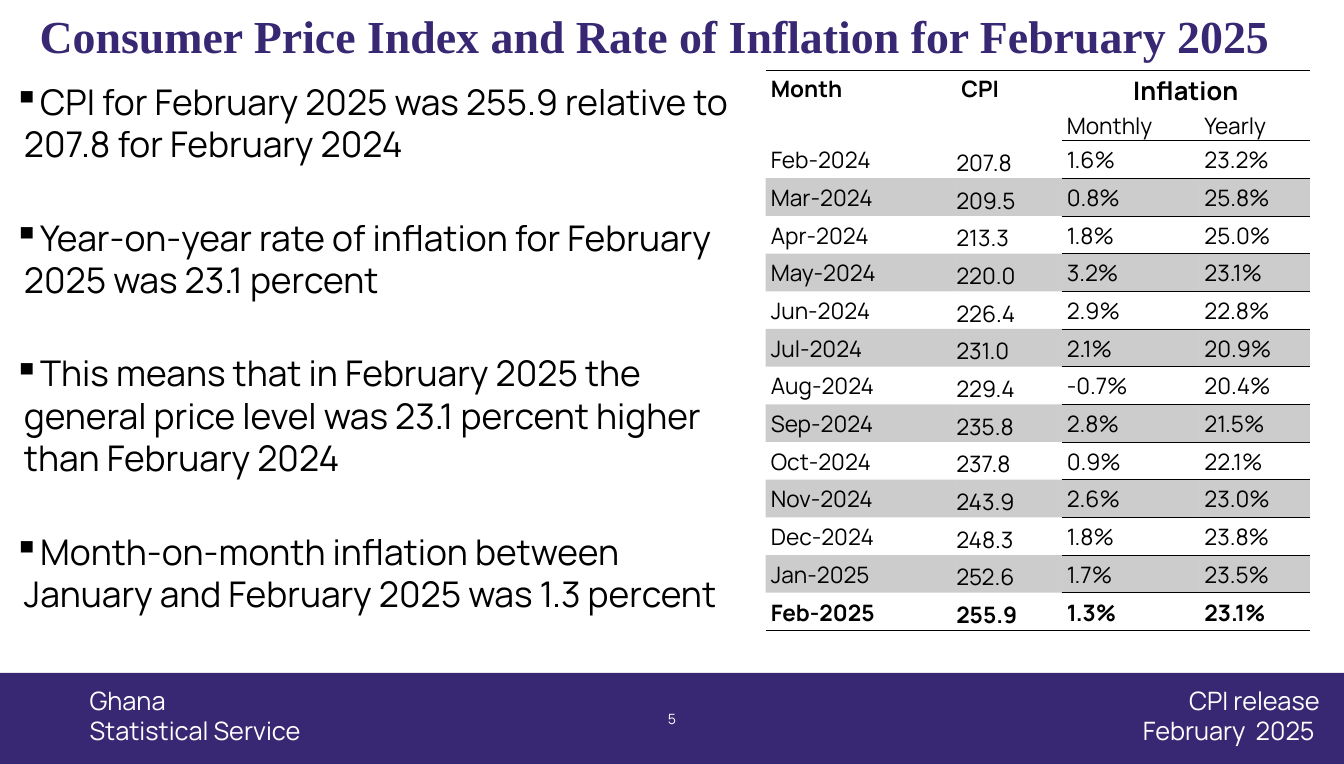
from dataclasses import dataclass

import lxml.etree
import pptx
import pptx.dml.color
import pptx.enum.shapes
import pptx.enum.text
import pptx.oxml.ns
import pptx.util

Inches = pptx.util.Inches
Align = pptx.enum.text.PP_ALIGN
Anchor = pptx.enum.text.MSO_ANCHOR
qn = pptx.oxml.ns.qn


@dataclass(frozen=True)
class Theme:
    """Colours, fonts and type sizes of the slide."""
    purple: str = "382873"
    black: str = "000000"
    white: str = "FFFFFF"
    body_font: str = "Manrope"
    title_font: str = "Times New Roman"
    title: float = 64.8
    bullet: float = 50
    group: float = 36
    footer: float = 35.8
    table: float = 32
    number: float = 20


THEME = Theme()
TITLE = "Consumer Price Index and Rate of Inflation for February 2025 "
BULLETS = [
    "CPI for February 2025 was 255.9 relative to 207.8 for February 2024",
    "Year-on-year rate of inflation for February 2025 was 23.1 percent",
    "This means that in February 2025 the general price level was 23.1 percent higher than February 2024",
    "Month-on-month inflation between  January and February 2025 was 1.3 percent",
]
COLUMN_WIDTHS = [3.74, 2.07, 2.7, 2.17]
HEADER_HEIGHTS = [0.74, 0.64]
ROW_HEIGHT = 0.74
ROWS = [
    ("Month", "CPI", "Inflation", ""),
    ("", "", "Monthly", "Yearly"),
    ("Feb-2024", "207.8", "1.6%", "23.2%"),
    ("Mar-2024", "209.5", "0.8%", "25.8%"),
    ("Apr-2024", "213.3", "1.8%", "25.0%"),
    ("May-2024", "220.0", "3.2%", "23.1%"),
    ("Jun-2024", "226.4", "2.9%", "22.8%"),
    ("Jul-2024", "231.0", "2.1%", "20.9%"),
    ("Aug-2024", "229.4", "-0.7%", "20.4%"),
    ("Sep-2024", "235.8", "2.8%", "21.5%"),
    ("Oct-2024", "237.8", "0.9%", "22.1%"),
    ("Nov-2024", "243.9", "2.6%", "23.0%"),
    ("Dec-2024", "248.3", "1.8%", "23.8%"),
    ("Jan-2025", "252.6", "1.7%", "23.5%"),
    ("Feb-2025", "255.9", "1.3%", "23.1%"),
]


def rgb(colour):
    """Turn a hex string into a colour value."""
    return pptx.dml.color.RGBColor.from_string(colour)


def style_text(text_frame, size, colour, font=THEME.body_font, bold=False, align=None):
    """Format every run and paragraph of a text frame."""
    for paragraph in text_frame.paragraphs:
        paragraph.alignment = align
        for run in paragraph.runs:
            run.font.size = pptx.util.Pt(size)
            run.font.name = font
            run.font.bold = bold
            run.font.color.rgb = rgb(colour)


def add_text(slide, box, text, size, colour, **style):
    """Place a wrapping text box and return its text frame."""
    text_frame = slide.shapes.add_textbox(*map(Inches, box)).text_frame
    text_frame.word_wrap = True
    text_frame.text = text
    style_text(text_frame, size, colour, **style)
    return text_frame


def add_title(slide, box):
    """Place the centred slide title."""
    text_frame = add_text(slide, box, TITLE, THEME.title, THEME.purple,
                          font=THEME.title_font, bold=True, align=Align.CENTER)
    text_frame.vertical_anchor = Anchor.MIDDLE
    text_frame.paragraphs[0].line_spacing = 0.9


def add_bullets(slide, box):
    """Place the key findings as a bulleted list."""
    text_frame = add_text(slide, box, "\n".join(BULLETS), THEME.bullet, THEME.black)
    for paragraph in text_frame.paragraphs:
        paragraph.space_after = pptx.util.Pt(72)
        properties = paragraph._p.get_or_add_pPr()
        properties.set("marL", str(Inches(0.2)))
        properties.set("indent", str(Inches(-0.2)))
        lxml.etree.SubElement(properties, qn("a:buChar"), char="▪")


def set_borders(cell, sides):
    """Draw the named sides of a cell and clear the others."""
    properties = cell._tc.get_or_add_tcPr()
    for side in "LRTB":
        line = lxml.etree.SubElement(properties, qn(f"a:ln{side}"), w=str(pptx.util.Pt(1)))
        if side in sides:
            fill = lxml.etree.SubElement(line, qn("a:solidFill"))
            lxml.etree.SubElement(fill, qn("a:srgbClr"), val=THEME.black)
        else:
            lxml.etree.SubElement(line, qn("a:noFill"))


def border_sides(row, column):
    """Tell which sides of a table cell carry a rule."""
    if row == 0:
        return "TB" if column < 2 else "T"
    if row == 1:
        return "B"
    if column >= 2:
        return "TB"
    return "B" if row == len(ROWS) - 1 else ""


def fill_cell(cell, shaded):
    """Shade a cell with translucent black or leave it clear."""
    if not shaded:
        cell.fill.background()
        return
    cell.fill.solid()
    cell.fill.fore_color.rgb = rgb(THEME.black)
    colour = cell._tc.tcPr.find(qn("a:solidFill")).find(qn("a:srgbClr"))
    lxml.etree.SubElement(colour, qn("a:alpha"), val="20000")


def add_cpi_table(slide, box):
    """Place the table of monthly index values and inflation rates."""
    table = slide.shapes.add_table(len(ROWS), len(COLUMN_WIDTHS), *map(Inches, box)).table
    table.first_row = table.horz_banding = False
    for column, width in zip(table.columns, COLUMN_WIDTHS):
        column.width = Inches(width)
    body_heights = [ROW_HEIGHT] * (len(ROWS) - len(HEADER_HEIGHTS))
    for row, height in zip(table.rows, HEADER_HEIGHTS + body_heights):
        row.height = Inches(height)
    for start, end in [((0, 0), (1, 0)), ((0, 1), (1, 1)), ((0, 2), (0, 3))]:
        table.cell(*start).merge(table.cell(*end))
    for row, values in enumerate(ROWS):
        for column, value in enumerate(values):
            cell = table.cell(row, column)
            set_borders(cell, border_sides(row, column))
            fill_cell(cell, row > 1 and row % 2 == 1)
            if cell.is_spanned:
                continue
            is_group = (row, column) == (0, 2)
            cell.text_frame.text = value
            style_text(cell.text_frame, THEME.group if is_group else THEME.table, THEME.black,
                       bold=row in (0, len(ROWS) - 1), align=Align.CENTER if is_group else None)
            if row > 1:
                cell.vertical_anchor = Anchor.BOTTOM
                if column == 1:
                    cell.margin_left = cell.margin_right = cell.margin_top = cell.margin_bottom = 0


def add_footer(slide, box):
    """Place the footer band with publisher, page number and release."""
    left, top, width, height = box
    band = slide.shapes.add_shape(pptx.enum.shapes.MSO_SHAPE.RECTANGLE, *map(Inches, box))
    band.shadow.inherit = False
    band.fill.solid()
    band.fill.fore_color.rgb = rgb(THEME.purple)
    band.line.fill.background()
    text_top = top + 0.19
    add_text(slide, (left + 1.66, text_top, 4.91, 1.3), "Ghana\nStatistical Service",
             THEME.footer, THEME.white)
    add_text(slide, (left + width - 5.03, text_top, 4.65, 1.3), "CPI release\nFebruary  2025 ",
             THEME.footer, THEME.white, align=Align.RIGHT)
    add_text(slide, (left + (width - 5.94) / 2, top + 0.69, 5.94, 0.8), "5",
             THEME.number, THEME.white, align=Align.CENTER)


def main():
    """Build the slide and save the presentation."""
    presentation = pptx.Presentation()
    presentation.slide_width = Inches(26.38)
    presentation.slide_height = Inches(15)
    slide = presentation.slides.add_slide(presentation.slide_layouts[6])
    add_footer(slide, (0, 13.21, 26.38, 1.79))
    add_bullets(slide, (0.17, 1.52, 14.68, 11.46))
    add_cpi_table(slide, (15.03, 1.38, 10.68, 11))
    add_title(slide, (0, 0.02, 25.92, 1.49))
    presentation.save("out.pptx")


if __name__ == "__main__":
    main()
